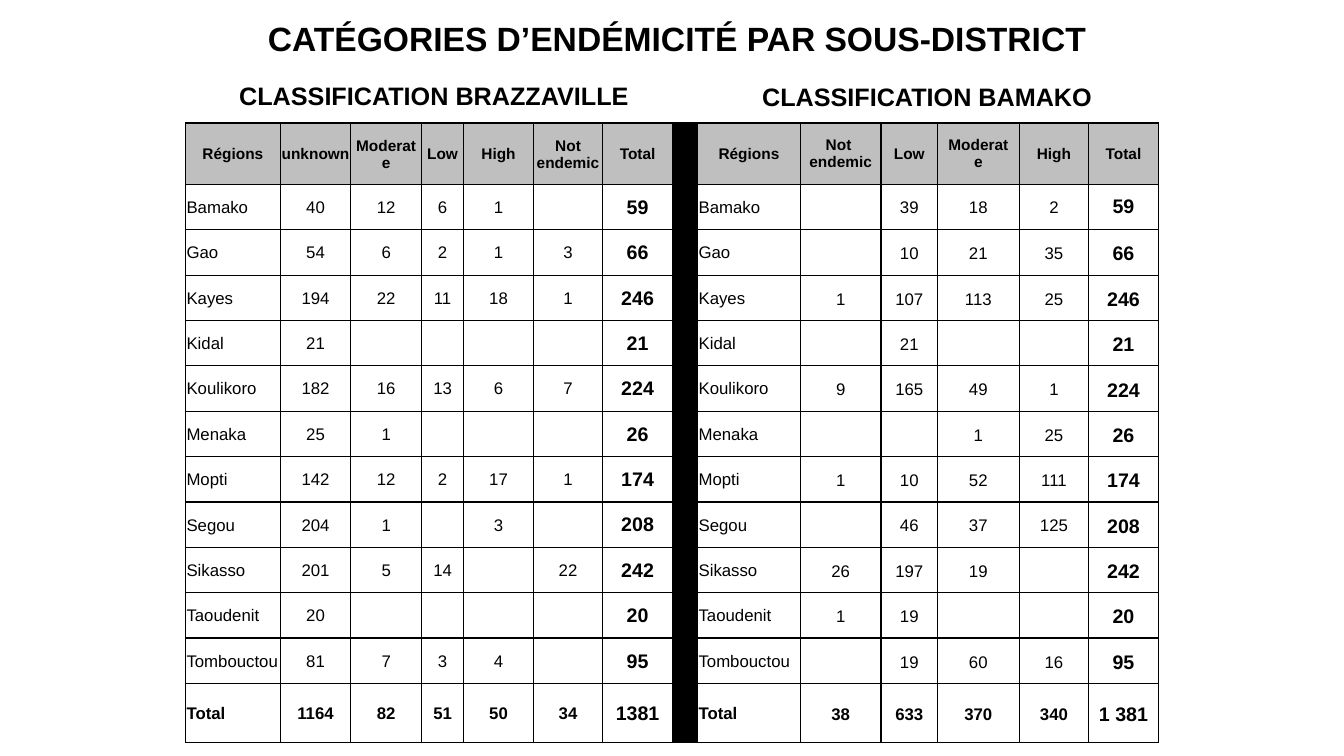
from lxml import etree
from pptx import Presentation
from pptx.dml.color import RGBColor
from pptx.enum.text import MSO_ANCHOR, PP_ALIGN
from pptx.oxml.ns import qn
from pptx.util import Inches, Pt

LEFT, CENTER = PP_ALIGN.LEFT, PP_ALIGN.CENTER
TOP, MIDDLE = MSO_ANCHOR.TOP, MSO_ANCHOR.MIDDLE
COLORS = {"black": "000000", "header": "BFBFBF"}
FONT = "Arial"
SIDES = ("left", "top", "right", "bottom")
DEFAULT_INSETS = (0.1, 0.05, 0.1, 0.05)
TIGHT_INSETS = (0.01, 0.01, 0.01, 0)
WIDE_INSETS = (0.07, 0, 0.07, 0)

TABLE_LEFT, TABLE_TOP = 1.84, 1.22
COLUMN_WIDTHS = [0.94, 0.7, 0.7, 0.42, 0.69, 0.69, 0.69, 0.25,
                 1.02, 0.8, 0.56, 0.81, 0.69, 0.69]
ROW_HEIGHTS = [0.61] + [0.45] * 11 + [0.59]
DIVIDER = 7
REGION_COLUMNS = (0, 8)
TOTAL_COLUMNS = (6, 13)

HEADERS = ["Régions", "unknown", "Moderate", "Low", "High", "Not endemic", "Total", "",
           "Régions", "Not \nendemic", "Low", "Moderate", "High", "Total"]
REGIONS = [
    ("Bamako", "40,12,6,1,,59", ",39,18,2,59"),
    ("Gao", "54,6,2,1,3,66", ",10,21,35,66"),
    ("Kayes", "194,22,11,18,1,246", "1,107,113,25,246"),
    ("Kidal", "21,,,,,21", ",21,,,21"),
    ("Koulikoro", "182,16,13,6,7,224", "9,165,49,1,224"),
    ("Menaka", "25,1,,,,26", ",,1,25,26"),
    ("Mopti", "142,12,2,17,1,174", "1,10,52,111,174"),
    ("Segou", "204,1,,3,,208", ",46,37,125,208"),
    ("Sikasso", "201,5,14,,22,242", "26,197,19,,242"),
    ("Taoudenit", "20,,,,,20", "1,19,,,20"),
    ("Tombouctou", "81,7,3,4,,95", ",19,60,16,95"),
    ("Total", "1164,82,51,50,34,1381", "38,633,370,340,1 381"),
]


def write_text(text_frame, text, size, bold=True, align=CENTER, spacing=None):
    text_frame.word_wrap = True
    for index, line in enumerate(text.split("\n")):
        paragraph = text_frame.paragraphs[0] if index == 0 else text_frame.add_paragraph()
        paragraph.alignment = align
        paragraph.line_spacing = spacing
        run = paragraph.add_run()
        run.text = line
        for name, value in {"name": FONT, "size": Pt(size), "bold": bold}.items():
            setattr(run.font, name, value)
        run.font.color.rgb = RGBColor.from_string(COLORS["black"])


def add_heading(slide, box, text, size, anchor=TOP):
    shape = slide.shapes.add_textbox(*map(Inches, box))
    shape.text_frame.vertical_anchor = anchor
    write_text(shape.text_frame, text, size)


def set_borders(cell):
    properties = cell._tc.get_or_add_tcPr()
    for position, tag in enumerate(("a:lnL", "a:lnR", "a:lnT", "a:lnB")):
        line = etree.Element(qn(tag), w=str(Pt(1)))
        fill = etree.SubElement(line, qn("a:solidFill"))
        etree.SubElement(fill, qn("a:srgbClr"), val=COLORS["black"])
        properties.insert(position, line)


def set_fill(cell, color):
    if color:
        cell.fill.solid()
        cell.fill.fore_color.rgb = RGBColor.from_string(COLORS[color])
    else:
        cell.fill.background()


def fill_cell(cell, row, column, text):
    header, total_row = row == 0, row == len(ROW_HEIGHTS) - 1
    region, total = column in REGION_COLUMNS, column in TOTAL_COLUMNS
    right_values = column > DIVIDER and not region
    set_fill(cell, "black" if column == DIVIDER else "header" if header else None)
    set_borders(cell)
    if not text:
        return
    insets = WIDE_INSETS if right_values else TIGHT_INSETS
    if header and region:
        insets = DEFAULT_INSETS
    for side, inset in zip(SIDES, insets):
        setattr(cell, f"margin_{side}", Inches(inset))
    cell.vertical_anchor = MIDDLE
    write_text(
        cell.text_frame, text,
        size=11 if header else 14 if total else 12,
        bold=header or total or total_row,
        align=LEFT if region and not header else CENTER,
        spacing=1.15 if right_values and row > 1 else None,
    )


def add_endemicity_table(slide):
    rows = [HEADERS] + [
        [region, *brazzaville.split(","), "", region, *bamako.split(",")]
        for region, brazzaville, bamako in REGIONS
    ]
    box = (TABLE_LEFT, TABLE_TOP, sum(COLUMN_WIDTHS), sum(ROW_HEIGHTS))
    table = slide.shapes.add_table(len(rows), len(HEADERS), *map(Inches, box)).table
    table.first_row = table.horz_banding = False
    for column, width in zip(table.columns, COLUMN_WIDTHS):
        column.width = Inches(width)
    for row, height in zip(table.rows, ROW_HEIGHTS):
        row.height = Inches(height)
    for row, values in enumerate(rows):
        for column, text in enumerate(values):
            fill_cell(table.cell(row, column), row, column, text)


def main():
    presentation = Presentation()
    presentation.slide_width, presentation.slide_height = Inches(13.33), Inches(7.5)
    slide = presentation.slides.add_slide(presentation.slide_layouts[6])
    add_heading(slide, (1.94, 0, 9.55, 0.76), "CATÉGORIES D’ENDÉMICITÉ PAR SOUS-DISTRICT", 24, MIDDLE)
    add_endemicity_table(slide)
    add_heading(slide, (1.94, 0.75, 4.73, 0.4), "CLASSIFICATION BRAZZAVILLE", 18)
    add_heading(slide, (6.9, 0.76, 4.59, 0.4), "CLASSIFICATION BAMAKO", 18)
    presentation.save("out.pptx")


if __name__ == "__main__":
    main()
